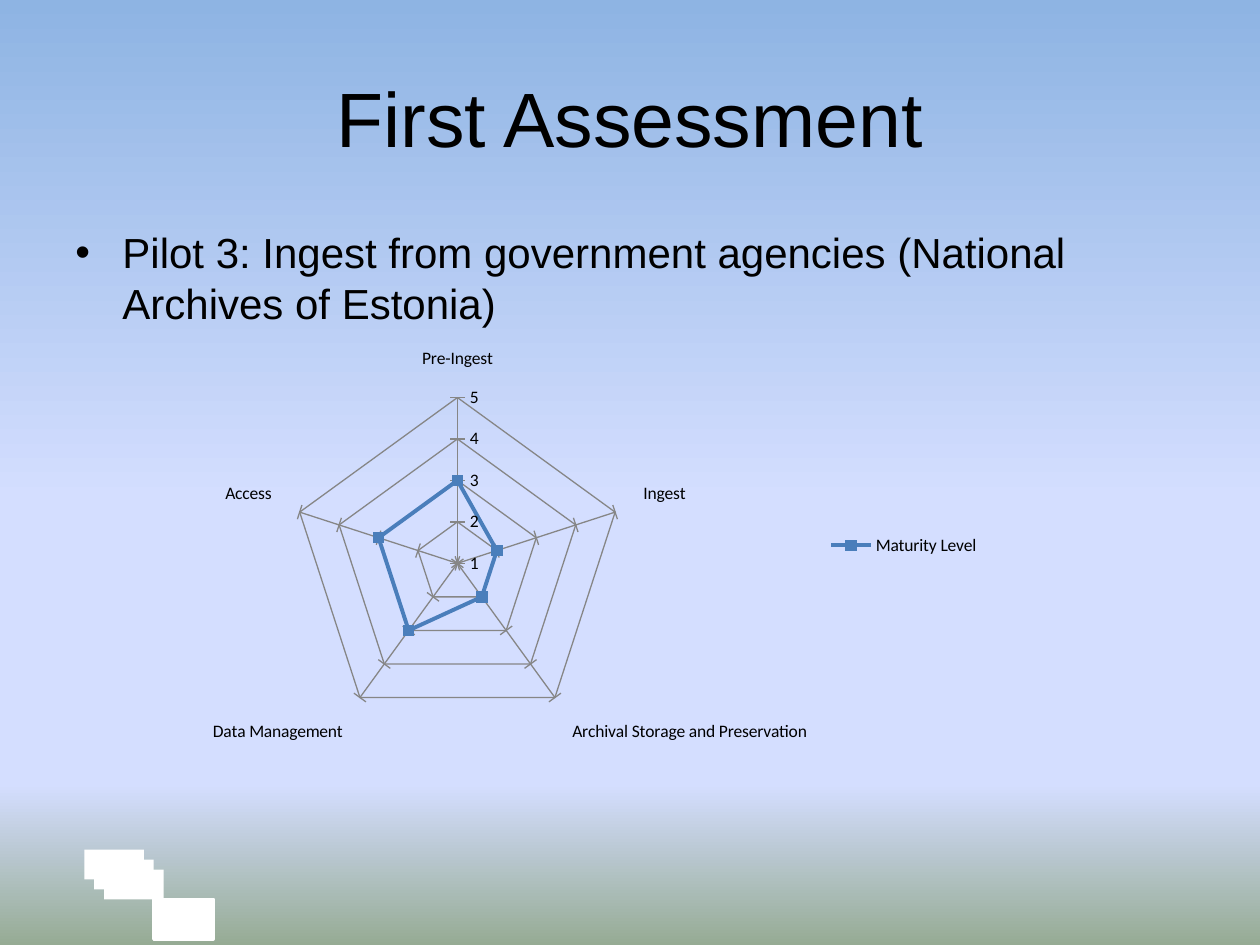
from dataclasses import dataclass

from lxml.etree import SubElement
from pptx import Presentation
from pptx.chart.data import CategoryChartData
from pptx.dml.color import RGBColor
from pptx.enum.chart import XL_CHART_TYPE, XL_LEGEND_POSITION, XL_MARKER_STYLE, XL_TICK_MARK
from pptx.enum.shapes import MSO_SHAPE
from pptx.enum.text import MSO_ANCHOR, PP_ALIGN
from pptx.oxml.ns import qn
from pptx.util import Cm, Pt


@dataclass(frozen=True)
class Theme:
    font: str = "Arial"
    chart_font: str = "Calibri"
    text: str = "000000"
    block: str = "FFFFFF"
    series: str = "4A7EBB"
    grid: str = "868686"
    sky: tuple = ((0, "8EB4E3"), (53, "D4DEFF"), (83, "D4DEFF"), (100, "96AB94"))
    title_size: int = 44
    body_size: int = 24
    chart_size: int = 10


def rgb(value):
    return RGBColor.from_string(value)


def write(tf, text, *, font, size, color, align=PP_ALIGN.LEFT, bullet=None, indent=0):
    p = tf.paragraphs[0]
    p.alignment = align
    if bullet:
        pPr = p._p.get_or_add_pPr()
        pPr.set("marL", str(Cm(indent)))
        pPr.set("indent", str(-Cm(indent)))
        SubElement(pPr, qn("a:buFont"), typeface=font)
        SubElement(pPr, qn("a:buChar"), char=bullet)
    r = p.add_run()
    r.text = text
    r.font.name = font
    r.font.size = Pt(size)
    r.font.color.rgb = rgb(color)


class SlideBuilder:
    def __init__(self, slide, theme):
        self.s = slide
        self.theme = theme

    def background(self):
        fill = self.s.background.fill
        fill.gradient()
        fill.gradient_angle = 270
        stops = self.s._element.find(".//" + qn("a:gsLst"))
        for stop in list(stops):
            stops.remove(stop)
        for percent, color in self.theme.sky:
            stop = SubElement(stops, qn("a:gs"), pos=str(percent * 1000))
            SubElement(stop, qn("a:srgbClr"), val=color)

    def block(self, x, y, w, h, outline=None):
        sp = self.s.shapes.add_shape(MSO_SHAPE.RECTANGLE, Cm(x), Cm(y), Cm(w), Cm(h))
        sp.shadow.inherit = False
        sp.fill.solid()
        sp.fill.fore_color.rgb = rgb(self.theme.block)
        if outline:
            sp.line.color.rgb = rgb(self.theme.block)
            sp.line.width = Pt(outline)
        else:
            sp.line.fill.background()

    def text(self, text, x, y, w, h, size, anchor=MSO_ANCHOR.TOP, **style):
        tf = self.s.shapes.add_textbox(Cm(x), Cm(y), Cm(w), Cm(h)).text_frame
        tf.word_wrap = True
        tf.vertical_anchor = anchor
        write(tf, text, font=self.theme.font, size=size, color=self.theme.text, **style)

    def radar(self, name, levels, x, y, w, h):
        data = CategoryChartData()
        data.categories = list(levels)
        data.add_series(name, list(levels.values()))
        chart = self.s.shapes.add_chart(
            XL_CHART_TYPE.RADAR_MARKERS, Cm(x), Cm(y), Cm(w), Cm(h), data
        ).chart
        chart.has_title = False
        chart.font.name = self.theme.chart_font
        chart.font.size = Pt(self.theme.chart_size)
        chart.font.color.rgb = rgb(self.theme.text)
        chart.has_legend = True
        chart.legend.position = XL_LEGEND_POSITION.RIGHT
        chart.legend.include_in_layout = False

        for axis, tick in (
            (chart.category_axis, XL_TICK_MARK.OUTSIDE),
            (chart.value_axis, XL_TICK_MARK.CROSS),
        ):
            axis.major_tick_mark = tick
            axis.minor_tick_mark = XL_TICK_MARK.NONE
            axis.has_major_gridlines = True
            for line in (axis.format.line, axis.major_gridlines.format.line):
                line.color.rgb = rgb(self.theme.grid)
                line.width = Pt(0.75)
        axis = chart.value_axis
        axis.minimum_scale, axis.maximum_scale, axis.major_unit = 1, 5, 1
        axis.tick_labels.number_format = "General"
        axis.tick_labels.number_format_is_linked = False

        plot = chart.plots[0]
        plot.vary_by_categories = False
        series = plot.series[0]
        series.format.line.color.rgb = rgb(self.theme.series)
        series.format.line.width = Pt(2.25)
        marker = series.marker
        marker.style = XL_MARKER_STYLE.SQUARE
        marker.size = 6
        marker.format.fill.solid()
        marker.format.fill.fore_color.rgb = rgb(self.theme.series)
        marker.format.line.color.rgb = rgb(self.theme.series)


def main():
    prs = Presentation()
    prs.slide_width, prs.slide_height = Cm(25.4), Cm(19.05)
    theme = Theme()
    slide = SlideBuilder(prs.slides.add_slide(prs.slide_layouts[6]), theme)

    slide.background()
    slide.block(3.1, 18.13, 1.2, 0.8, outline=2)
    for step in (2, 1, 0):
        slide.block(1.7 + 0.2 * step, 17.13 + 0.2 * step, 1.2, 0.6)

    slide.text("First Assessment", 1.27, 0.76, 22.86, 3.18, theme.title_size,
               anchor=MSO_ANCHOR.MIDDLE, align=PP_ALIGN.CENTER)
    slide.text("Pilot 3: Ingest from government agencies (National Archives of Estonia)",
               1.27, 4.45, 22.86, 12.57, theme.body_size, bullet="•", indent=0.95)

    levels = {
        "Pre-Ingest": 3,
        "Ingest": 2,
        "Archival Storage and Preservation": 2,
        "Data Management": 3,
        "Access": 3,
    }
    slide.radar("Maturity Level", levels, 3.91, 6.32, 16.1, 9.35)

    prs.save("out.pptx")


if __name__ == "__main__":
    main()
